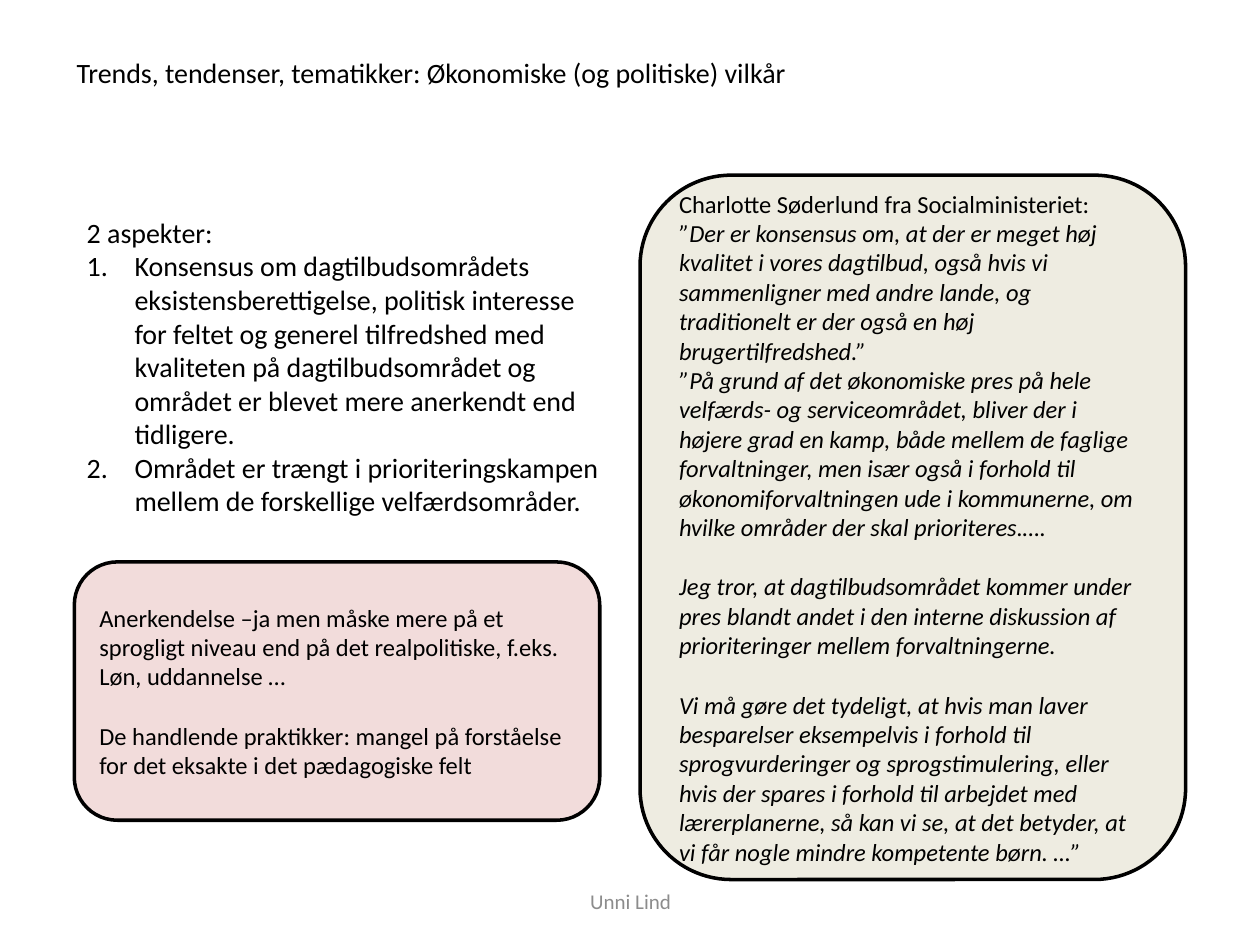
"""Build a slide on economic and political conditions for day care."""
from lxml.etree import SubElement
from pptx import Presentation
from pptx.dml.color import RGBColor
from pptx.enum.shapes import MSO_SHAPE
from pptx.enum.text import MSO_ANCHOR as Anchor, PP_ALIGN as Align
from pptx.oxml.ns import qn
from pptx.util import Inches, Pt

COLORS = {"text": "000000", "footer": "8C8C8C", "line": "000000",
          "comment": "F2DCDB", "quote": "EEECE1"}
FONT = "Calibri"
LINE_HEIGHT = 1.22
INDENT = 0.38

FOOTER = [("Unni Lind", "")]
TITLE = [("Trends, tendenser, tematikker: Økonomiske (og politiske) vilkår", "")]
ASPECTS = [
    ("2 aspekter:", ""),
    ("Konsensus om dagtilbudsområdets eksistensberettigelse, politisk interesse "
     "for feltet og generel tilfredshed med kvaliteten på dagtilbudsområdet og "
     "området er blevet mere anerkendt end tidligere.", "number"),
    ("Området er trængt i prioriteringskampen mellem de forskellige "
     "velfærdsområder.", "number"),
]
COMMENT = [
    ("Anerkendelse –ja men måske mere på et sprogligt niveau end på det "
     "realpolitiske, f.eks. Løn, uddannelse …", ""),
    ("De handlende praktikker: mangel på forståelse for det eksakte i det "
     "pædagogiske felt", "gap"),
]
QUOTE = [
    ("Charlotte Søderlund fra Socialministeriet:", ""),
    ("”Der er konsensus om, at der er meget høj kvalitet i vores dagtilbud, også "
     "hvis vi sammenligner med andre lande, og traditionelt er der også en høj "
     "brugertilfredshed.”", "italic"),
    ("”På grund af det økonomiske pres på hele velfærds- og serviceområdet, bliver "
     "der i højere grad en kamp, både mellem de faglige forvaltninger, men især "
     "også i forhold til økonomiforvaltningen ude i kommunerne, om hvilke områder "
     "der skal prioriteres.….", "italic"),
    ("Jeg tror, at dagtilbudsområdet kommer under pres blandt andet i den interne "
     "diskussion af prioriteringer mellem forvaltningerne.", "italic gap"),
    ("Vi må gøre det tydeligt, at hvis man laver besparelser eksempelvis i forhold "
     "til sprogvurderinger og sprogstimulering, eller hvis der spares i forhold til "
     "arbejdet med lærerplanerne, så kan vi se, at det betyder, at vi får nogle "
     "mindre kompetente børn. …”", "italic gap"),
]

TEXTS = [
    (FOOTER, (3.42, 6.95, 3.17, 0.4), 12, "footer", Align.CENTER, Anchor.MIDDLE),
    (TITLE, (0.51, 0.39, 9.13, 0.37), 16, "text", Align.LEFT, Anchor.TOP),
    (ASPECTS, (0.59, 1.66, 4.37, 2.79), 16, "text", Align.LEFT, Anchor.TOP),
]
PANELS = [
    (COMMENT, (0.59, 4.46, 4.17, 2.05), "comment"),
    (QUOTE, (5.08, 1.39, 4.33, 5.59), "quote"),
]


def rgb(name):
    return RGBColor.from_string(COLORS[name])


def number(p):
    pPr = p._p.get_or_add_pPr()
    pPr.set("marL", str(Inches(INDENT)))
    pPr.set("indent", str(-Inches(INDENT)))
    SubElement(pPr, qn("a:buFont")).set("typeface", "+mj-lt")
    SubElement(pPr, qn("a:buAutoNum")).set("type", "arabicPeriod")


def write(sp, paragraphs, size, color, align, anchor):
    tf = sp.text_frame
    tf.word_wrap = True
    tf.vertical_anchor = anchor
    for i, (text, style) in enumerate(paragraphs):
        p = tf.paragraphs[0] if i == 0 else tf.add_paragraph()
        p.alignment = align
        if "gap" in style:
            p.space_before = Pt(round(size * LINE_HEIGHT, 1))
        if "number" in style:
            number(p)
        r = p.add_run()
        r.text = text
        font = {"name": FONT, "size": Pt(size), "italic": "italic" in style}
        for key, value in font.items():
            setattr(r.font, key, value)
        r.font.color.rgb = rgb(color)


def add_panel(s, paragraphs, box, fill):
    sp = s.shapes.add_shape(MSO_SHAPE.ROUNDED_RECTANGLE, *map(Inches, box))
    sp.shadow.inherit = False
    sp.fill.solid()
    sp.fill.fore_color.rgb = rgb(fill)
    sp.line.color.rgb = rgb("line")
    sp.line.width = Pt(2)
    write(sp, paragraphs, 14, "text", Align.LEFT, Anchor.MIDDLE)


def main():
    prs = Presentation()
    prs.slide_width, prs.slide_height = Inches(10), Inches(7.5)
    s = prs.slides.add_slide(prs.slide_layouts[6])
    for paragraphs, box, *look in TEXTS:
        write(s.shapes.add_textbox(*map(Inches, box)), paragraphs, *look)
    for panel in PANELS:
        add_panel(s, *panel)
    prs.save("out.pptx")


if __name__ == "__main__":
    main()
